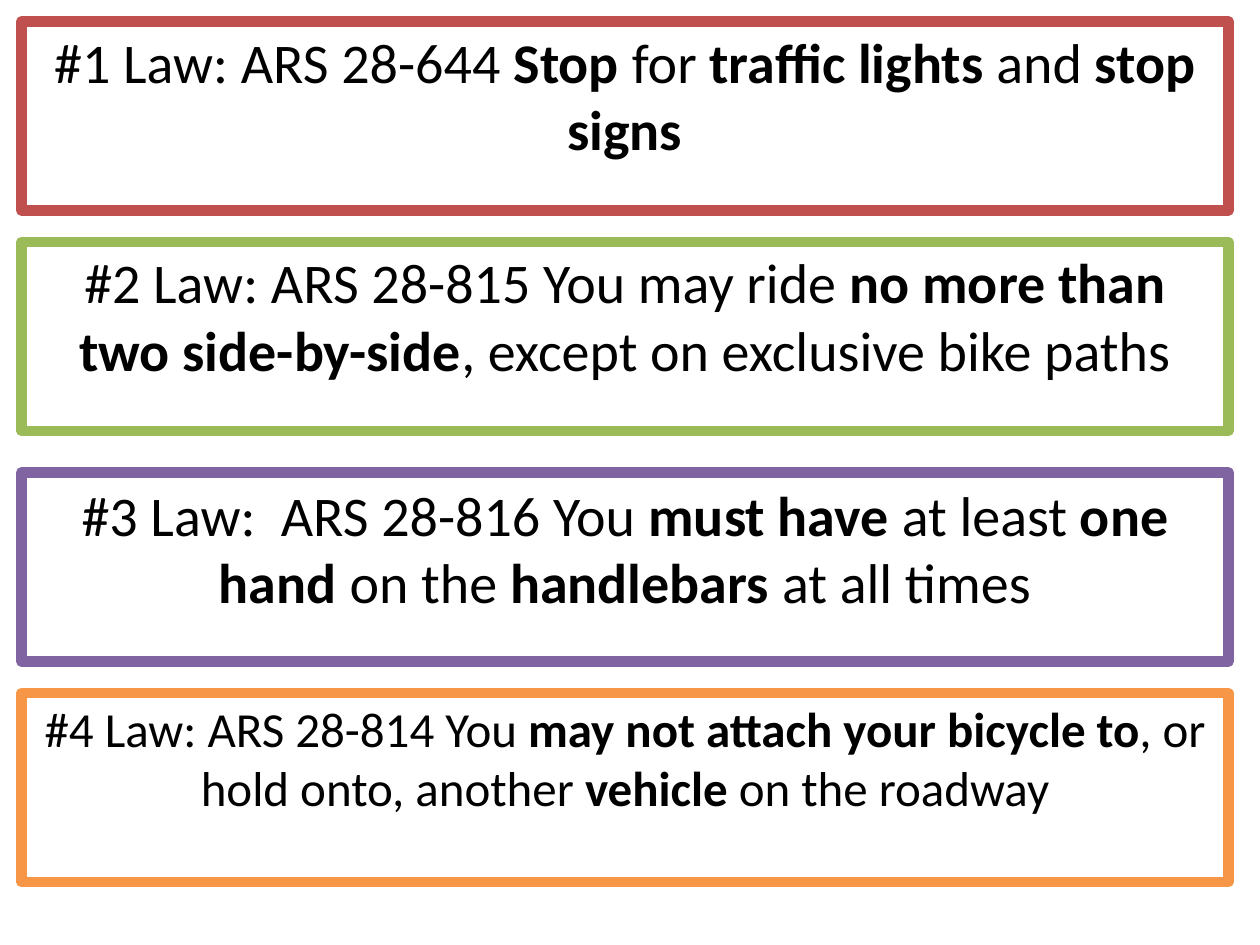
"""Build a slide of four bicycle traffic laws, each in a coloured frame."""
from pptx import Presentation
from pptx.dml.color import RGBColor
from pptx.enum.shapes import MSO_SHAPE
from pptx.enum.text import MSO_ANCHOR, PP_ALIGN
from pptx.util import Inches, Pt

RECTANGLE = MSO_SHAPE.RECTANGLE
MIDDLE = MSO_ANCHOR.MIDDLE
CENTER = PP_ALIGN.CENTER

LAWS = [
    {"wording": "#1 Law: ARS 28-644 **Stop** for **traffic lights** and **stop signs**",
     "frame": "red", "size": "large", "room": "medium"},
    {"wording": "#2 Law: ARS 28-815 You may ride **no more than two side-by-side**"
                ", except on exclusive bike paths",
     "frame": "green", "size": "large", "room": "medium"},
    {"wording": "#3 Law:  ARS 28-816 You **must have** at least **one hand** on the "
                "**handlebars** at all times",
     "frame": "purple", "size": "large", "room": "small"},
    {"wording": "#4 Law: ARS 28-814 You **may not attach your bicycle to**, or hold onto, "
                "another **vehicle** on the roadway",
     "frame": "orange", "size": "normal", "room": "normal"},
]

THEME = {
    "font": "Calibri",
    "colours": {"text": "000000", "paper": "FFFFFF", "red": "C0504D",
                "green": "9BBB59", "purple": "8064A2", "orange": "F79646"},
    "sizes": {"large": 32, "normal": 28, "medium": 20, "small": 18},
    "line_spacing": 1.22,
    "frame_width": 6,
}

SLIDE_WIDTH, SLIDE_HEIGHT = 10, 7.5
MARGIN = 0.17
FRAME_WIDTH, FRAME_HEIGHT = 9.58, SLIDE_HEIGHT / 5
ROW_PITCH = 1.75
HALF_GAP = 0.08
ROWS_PER_HALF = 2


def colour(key):
    """Return a theme colour."""
    return RGBColor.from_string(THEME["colours"][key])


def write(frame, wording, *, size, room):
    """Write wording with **bold** parts, leaving one line of room beneath."""
    frame.word_wrap = True
    frame.vertical_anchor = MIDDLE
    frame.margin_top = 0
    frame.margin_bottom = Pt(THEME["sizes"][room] * THEME["line_spacing"])
    paragraph = frame.paragraphs[0]
    paragraph.alignment = CENTER
    for index, part in enumerate(wording.split("**")):
        if part:
            run = paragraph.add_run()
            run.text = part
            run.font.name = THEME["font"]
            run.font.size = Pt(THEME["sizes"][size])
            run.font.bold = index % 2 == 1
            run.font.color.rgb = colour("text")


def add_law(slide, row, law):
    """Add one framed law in its row."""
    top = MARGIN + row * ROW_PITCH + row // ROWS_PER_HALF * HALF_GAP
    box = slide.shapes.add_shape(RECTANGLE, Inches(MARGIN), Inches(top),
                                 Inches(FRAME_WIDTH), Inches(FRAME_HEIGHT))
    box.shadow.inherit = False
    box.fill.solid()
    box.fill.fore_color.rgb = colour("paper")
    box.line.color.rgb = colour(law["frame"])
    box.line.width = Pt(THEME["frame_width"])
    write(box.text_frame, law["wording"], size=law["size"], room=law["room"])


def main():
    """Build and save the slide."""
    deck = Presentation()
    deck.slide_width, deck.slide_height = Inches(SLIDE_WIDTH), Inches(SLIDE_HEIGHT)
    slide = deck.slides.add_slide(deck.slide_layouts[6])
    for row, law in enumerate(LAWS):
        add_law(slide, row, law)
    deck.save("out.pptx")


if __name__ == "__main__":
    main()
